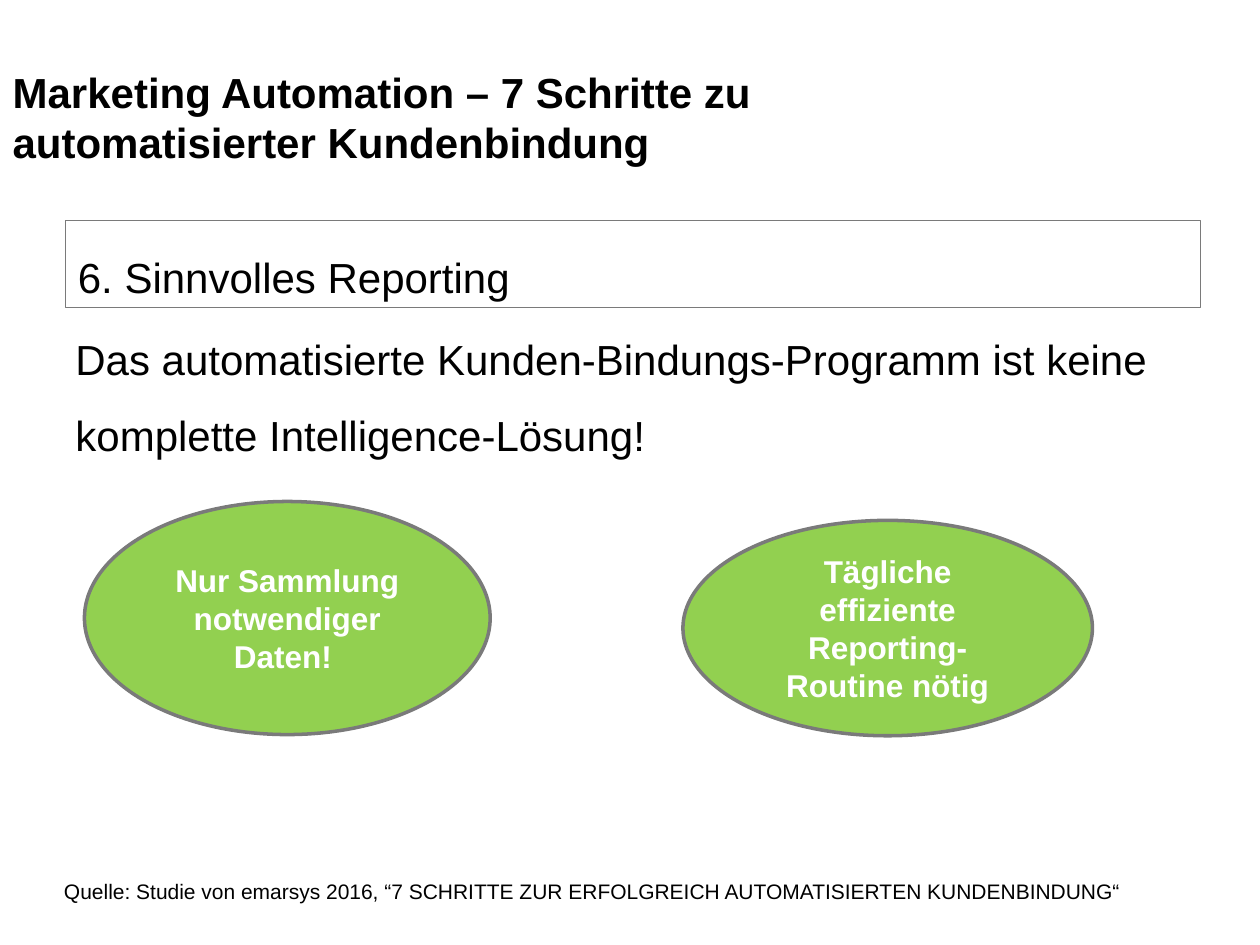
from pptx import Presentation
from pptx.dml.color import RGBColor
from pptx.enum.shapes import MSO_SHAPE as SHAPE
from pptx.enum.text import MSO_ANCHOR as ANCHOR, MSO_AUTO_SIZE as FIT, PP_ALIGN as ALIGN
from pptx.util import Inches, Pt

COLORS = {"text": "000000", "light": "FFFFFF", "green": "92D050", "outline": "7A7A7A"}
FONT = "Arial"

TITLE = "Marketing Automation – 7 Schritte zu automatisierter Kundenbindung"
STEP = "6. Sinnvolles Reporting"
MESSAGE = ("Das automatisierte Kunden-Bindungs-Programm ist keine "
           "komplette Intelligence-Lösung!")
SOURCE = ("Quelle: Studie von emarsys 2016, “7 SCHRITTE ZUR ERFOLGREICH "
          "AUTOMATISIERTEN KUNDENBINDUNG“")
# text, left, top, width, height in inches
GOALS = [
    ("Nur Sammlung notwendiger Daten! ", 0.67, 3.98, 3.22, 1.85),
    ("Tägliche effiziente Reporting-Routine nötig", 5.42, 4.13, 3.25, 1.71),
]


def rgb(name):
    return RGBColor.from_string(COLORS[name])


def place(sp, *box):
    sp.left, sp.top, sp.width, sp.height = map(Inches, box)


def write(sp, text, size=24, color="text", bold=False, align=ALIGN.LEFT,
          anchor=ANCHOR.TOP, spacing=1.0, wrap=True):
    tf = sp.text_frame
    tf.auto_size = FIT.NONE
    tf.word_wrap = wrap
    tf.vertical_anchor = anchor
    p = tf.paragraphs[0]
    p.alignment = align
    p.line_spacing = spacing
    r = p.add_run()
    r.text = text
    r.font.name, r.font.size, r.font.bold = FONT, Pt(size), bold
    r.font.color.rgb = rgb(color)


def add_outlined(slide, kind, box, line_width, fill=None):
    sp = slide.shapes.add_shape(kind, *map(Inches, box))
    sp.shadow.inherit = False
    if fill:
        sp.fill.solid()
        sp.fill.fore_color.rgb = rgb(fill)
    else:
        sp.fill.background()
    sp.line.color.rgb = rgb("outline")
    sp.line.width = Pt(line_width)
    return sp


def add_text(slide, box, text, **style):
    write(slide.shapes.add_textbox(*map(Inches, box)), text, **style)


def main():
    prs = Presentation()
    prs.slide_width, prs.slide_height = Inches(10), Inches(7.5)
    slide = prs.slides.add_slide(prs.slide_layouts[5])

    title = slide.shapes.title
    place(title, 0, 0.47, 6.89, 0.91)
    write(title, TITLE, bold=True, anchor=ANCHOR.MIDDLE)

    add_text(slide, (0.41, 6.92, 8.67, 0.3), SOURCE, size=12, wrap=False)

    for text, *box in GOALS:
        sp = add_outlined(slide, SHAPE.OVAL, box, 2, "green")
        write(sp, text, size=18, color="light", bold=True,
              align=ALIGN.CENTER, anchor=ANCHOR.MIDDLE)

    step = add_outlined(slide, SHAPE.RECTANGLE, (0.52, 1.75, 9.01, 0.69), 0.75)
    write(step, STEP, spacing=1.5)
    add_text(slide, (0.5, 2.4, 8.78, 1.24), MESSAGE, spacing=1.5)

    prs.save("out.pptx")


if __name__ == "__main__":
    main()
